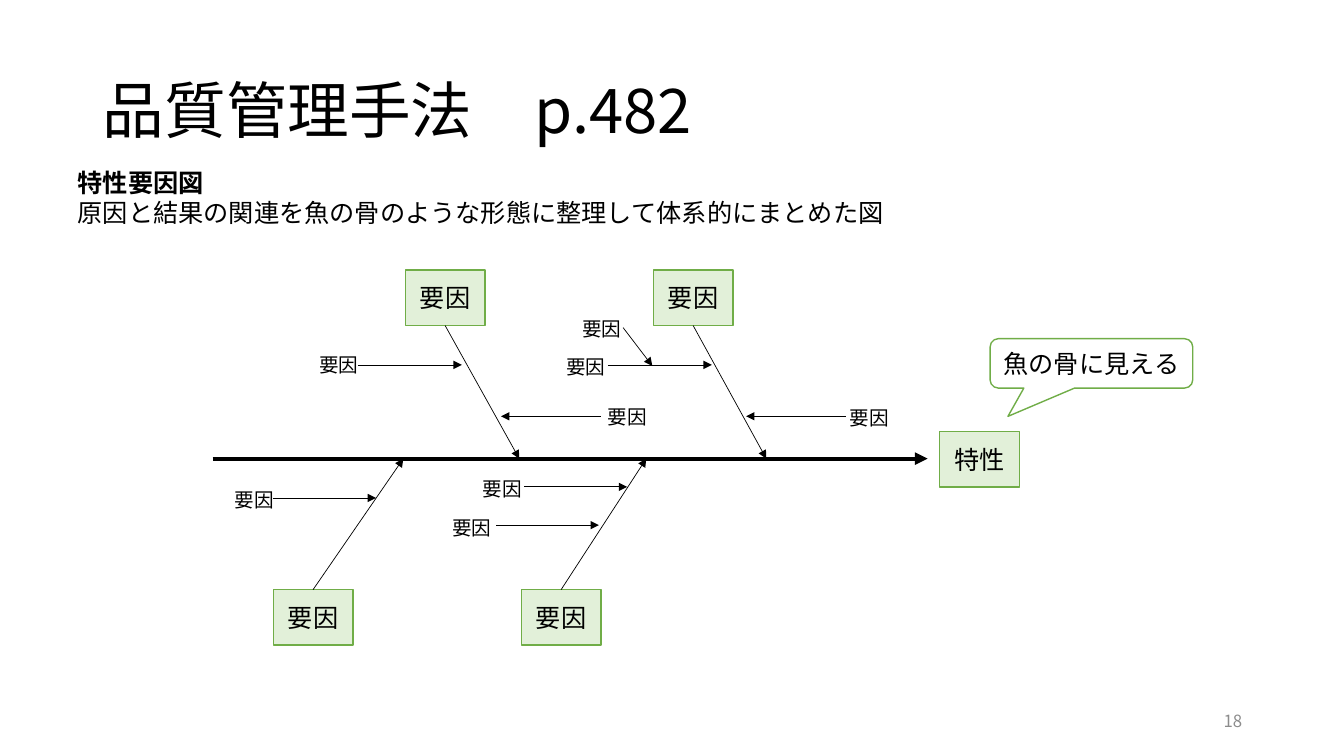
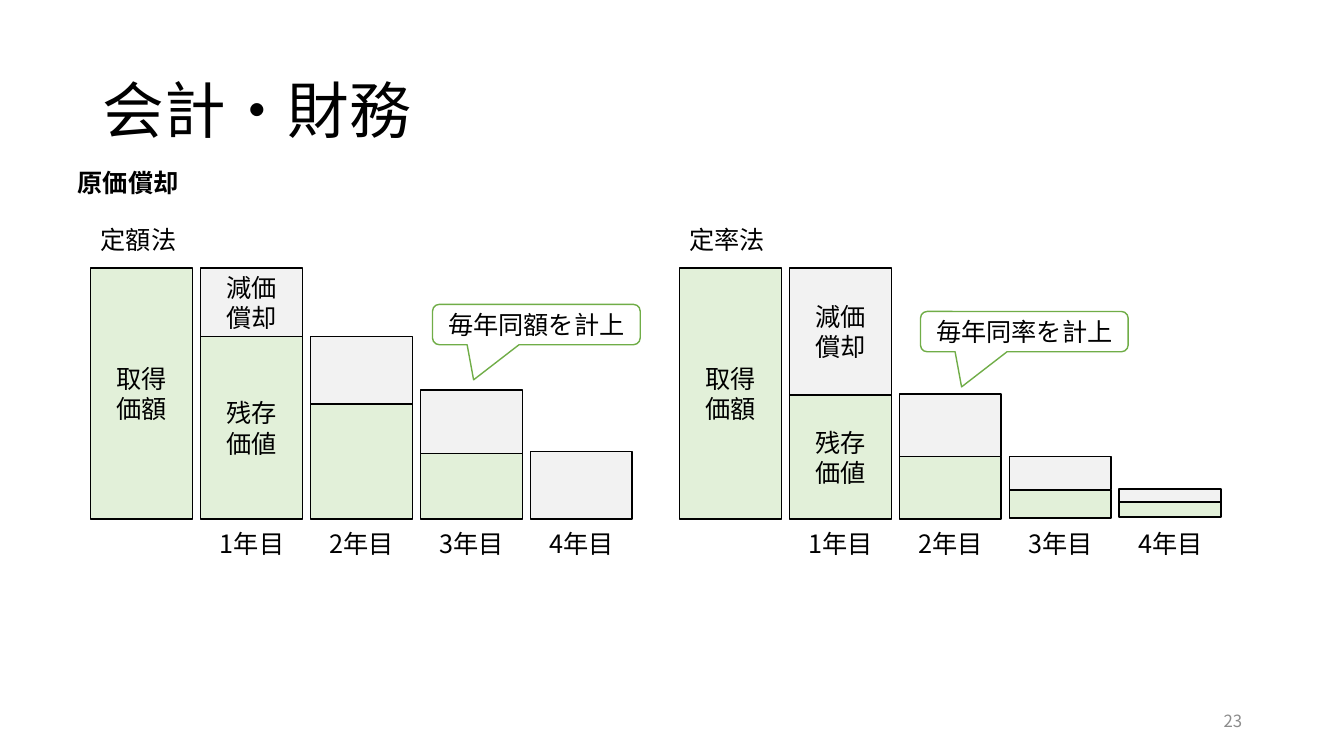
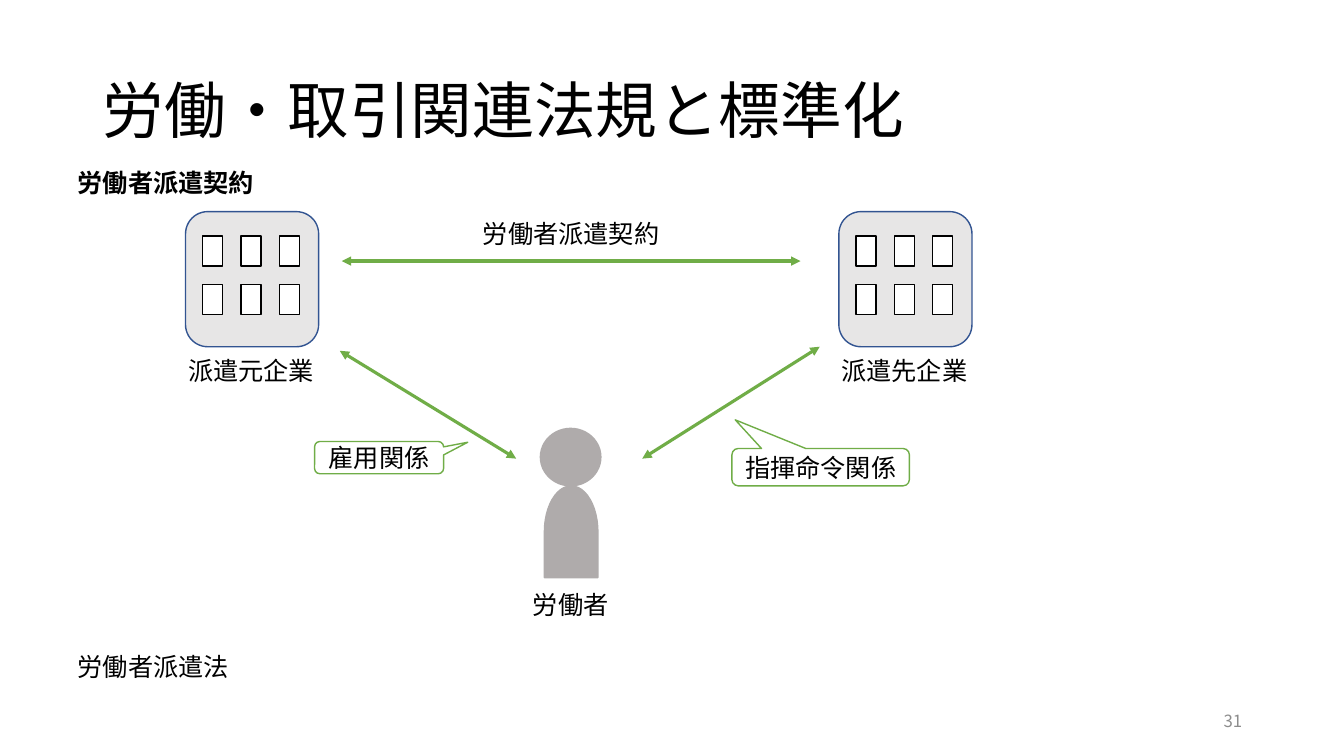
from lxml.etree import SubElement
from pptx import Presentation
from pptx.dml.color import RGBColor
from pptx.enum.shapes import MSO_CONNECTOR, MSO_SHAPE
from pptx.enum.text import MSO_ANCHOR, MSO_AUTO_SIZE, PP_ALIGN
from pptx.oxml.ns import qn
from pptx.util import Emu, Pt

UNIT = 9144  # EMU per px, 100 px to the inch
FONT = "Noto Sans CJK JP"
BLACK, WHITE, GRAY = "000000", "FFFFFF", "8C8C8C"
GREEN, MINT, PALE = "70AD47", "E2F0D9", "F2F2F2"
WALL, EDGE, BODY = "E7E6E6", "325491", "AFABAB"
LEFT, MID, RIGHT = PP_ALIGN.LEFT, PP_ALIGN.CENTER, PP_ALIGN.RIGHT

# Cause-and-effect diagram
FISH = {
    "title": "品質管理手法　p.482", "page": "18",
    "body": "特性要因図\n原因と結果の関連を魚の骨のような形態に整理して体系的にまとめた図",
}
SPINE_Y = 455
# box left, box top, side the bone leaves from, where it meets the spine
BONES = [(271, 585, 0, 400), (517, 585, 0, 641),
         (402, 268, 2, 515), (648, 268, 2, 760)]
TWIGS = [(839, 413, 740, 413), (596, 413, 497, 413), (603, 362, 706, 362),
         (355, 362, 458, 362), (271, 494, 373, 494), (492, 521, 594, 521),
         (520, 483, 622, 483), (618, 325, 647, 363)]
CAUSES = [(565, 309), (220, 479), (436, 507), (466, 468),
          (304, 345), (590, 397), (549, 347), (830, 398)]

# Depreciation: each bar is (top, split, bottom), gray above green
ASSETS = {"title": "会計・財務", "page": "23", "body": "原価償却"}
METHODS = [
    {"name": "定額法", "left": 90, "note": "毎年同額を計上", "at": (429, 302),
     "bars": [(266, 266, 515), (266, 334, 515), (334, 401, 515),
              (387, 450, 515), (448, 515, 515)]},
    {"name": "定率法", "left": 674, "note": "毎年同率を計上", "at": (913, 309),
     "bars": [(266, 266, 515), (266, 392, 515), (391, 453, 515),
              (453, 486, 514), (485, 498, 513)]},
]
LOSS = {1: "減価\n償却"}
VALUE = {0: "取得\n価額", 1: "残存\n価値"}
BAR_W, BAR_STEP = 101, 109

# Worker dispatch
DISPATCH = {"title": "労働・取引関連法規と標準化", "page": "31",
            "body": "労働者派遣契約\n労働者派遣法", "gap": 324}
FIRMS = [("派遣元企業", 184), ("派遣先企業", 832)]
TIES = [(339, 259, 794, 259), (337, 348, 512, 455), (813, 344, 637, 455)]
CAPTIONS = [("労働者", 489, 580, 154), ("労働者派遣契約", 461, 212, 211)]
NOTES = [("指揮命令関係", (726, 445, 176, 37), (-0.481, -1.269)),
         ("雇用関係", (312, 438, 128, 32), (0.687, -0.476))]


def px(*values):
    return [Emu(round(v * UNIT)) for v in values]


def rgb(code):
    return RGBColor.from_string(code)


def write(frame, text, size=18, color=BLACK, align=MID, anchor=MSO_ANCHOR.TOP,
          font=FONT, bold=0, gap=0, pitch=None):
    """Fill a frame, one paragraph a line; the first `bold` lines are bold."""
    frame.word_wrap = True
    frame.auto_size = MSO_AUTO_SIZE.NONE
    frame.vertical_anchor = anchor
    for i, line in enumerate(text.split("\n")):
        para = frame.add_paragraph() if i else frame.paragraphs[0]
        para.alignment = align
        para.line_spacing = pitch or Pt(size * 1.2)
        para.space_before = Pt(gap if i else 0)
        run = para.add_run()
        run.text = line
        run.font.size = Pt(size)
        run.font.bold = i < bold
        run.font.color.rgb = rgb(color)
        run.font.name = font
        SubElement(run._r.get_or_add_rPr(), qn("a:ea"), typeface=FONT)


def label(slide, text, x, y, w, h=40, **style):
    write(slide.shapes.add_textbox(*px(x, y, w, h)).text_frame, text, **style)


def shape(slide, kind, box, fill, line, text="", adjust=()):
    item = slide.shapes.add_shape(kind, *px(*box))
    item.shadow.inherit = False
    item.fill.solid()
    item.fill.fore_color.rgb = rgb(fill)
    item.line.color.rgb = rgb(line)
    item.line.width = Pt(1)
    for i, value in enumerate(adjust):
        item.adjustments[i] = value
    if text:
        frame = item.text_frame
        frame.margin_left = frame.margin_right = 0
        frame.margin_top = frame.margin_bottom = 0
        write(frame, text, anchor=MSO_ANCHOR.MIDDLE)
    return item


def rect(slide, box, fill, line=BLACK, text=""):
    return shape(slide, MSO_SHAPE.RECTANGLE, box, fill, line, text)


def callout(slide, text, box, tip):
    shape(slide, MSO_SHAPE.ROUNDED_RECTANGULAR_CALLOUT, box, WHITE, GREEN,
          text, (*tip, 0.167))


def arrow(slide, ends, color=BLACK, width=0.5, both=False):
    item = slide.shapes.add_connector(MSO_CONNECTOR.STRAIGHT, *px(*ends))
    item.line.color.rgb = rgb(color)
    item.line.width = Pt(width)
    props = item._element.spPr
    for tag in ("a:headEnd", "a:tailEnd")[0 if both else 1:]:
        SubElement(props.find(qn("a:ln")), qn(tag), type="triangle")
    SubElement(props, qn("a:effectLst"))
    return item


def place(item, *box):
    item.left, item.top, item.width, item.height = px(*box)


def page(deck, data):
    """Add a slide with its title, body text and page number."""
    slide = deck.slides.add_slide(deck.slide_layouts[1])
    title, body = slide.shapes.title, slide.placeholders[1]
    place(title, 92, 40, 1150, 145)
    write(title.text_frame, data["title"], size=44, align=LEFT,
          anchor=MSO_ANCHOR.MIDDLE, pitch=0.9)
    place(body, 67, 161, 1199, 525 if "gap" in data else 131)
    write(body.text_frame, data["body"], align=LEFT, font="Arial", bold=1,
          gap=data.get("gap", 0))
    for para in body.text_frame.paragraphs:
        props = para._p.get_or_add_pPr()
        props.set("marL", "0")
        props.set("indent", "0")
        SubElement(props, qn("a:buNone"))
    label(slide, data["page"], 942, 695, 300, size=12, color=GRAY,
          align=RIGHT, anchor=MSO_ANCHOR.MIDDLE)
    return slide


def fish(deck):
    slide = page(deck, FISH)
    arrow(slide, (211, SPINE_Y, 920, SPINE_Y), width=3)
    rect(slide, (932, 428, 79, 55), MINT, GREEN, "特性")
    for x, y, side, meet in BONES:
        box = rect(slide, (x, y, 79, 55), MINT, GREEN, "要因")
        bone = arrow(slide, (x, y, meet, SPINE_Y))
        bone.begin_connect(box, side)
    for ends in TWIGS:
        arrow(slide, ends)
    for x, y in CAUSES:
        label(slide, "要因", x, y, 64, 34, size=14)
    callout(slide, "魚の骨に見える", (982, 336, 201, 49), (-0.412, 1.073))


def assets(deck):
    slide = page(deck, ASSETS)
    for method in METHODS:
        left = method["left"]
        label(slide, method["name"], left, 218, BAR_W, align=LEFT)
        for year, (top, split, end) in enumerate(method["bars"]):
            x = left + year * BAR_STEP
            if split > top:
                rect(slide, (x, top, BAR_W, split - top), PALE,
                     text=LOSS.get(year, ""))
            if end > split:
                rect(slide, (x, split, BAR_W, end - split), MINT,
                     text=VALUE.get(year, ""))
            if year:
                label(slide, f"{year}年目", x + 6, 519, 90)
        callout(slide, method["note"], (*method["at"], 206, 40),
                (-0.302, 1.372))


def firm(slide, name, x):
    shape(slide, MSO_SHAPE.ROUNDED_RECTANGLE, (x, 210, 132, 134), WALL, EDGE)
    for row in range(2):
        for col in range(3):
            rect(slide, (x + 17 + 38 * col, 234 + 48 * row, 20, 30), WHITE)
    label(slide, name, x - 9, 348, 148)


def dispatch(deck):
    slide = page(deck, DISPATCH)
    for name, x in FIRMS:
        firm(slide, name, x)
    shape(slide, MSO_SHAPE.OVAL, (536, 425, 60, 57), BODY, BODY)
    torso = shape(slide, MSO_SHAPE.FLOWCHART_DELAY, (521, 501, 91, 53),
                  BODY, BODY)
    torso.rotation = 270
    for ends in TIES:
        arrow(slide, ends, GREEN, 2.25, both=True)
    for text, x, y, w in CAPTIONS:
        label(slide, text, x, y, w)
    for text, box, tip in NOTES:
        callout(slide, text, box, tip)


def main():
    deck = Presentation()
    deck.slide_width, deck.slide_height = px(1333, 750)
    fish(deck)
    assets(deck)
    dispatch(deck)
    deck.save("out.pptx")


if __name__ == "__main__":
    main()
